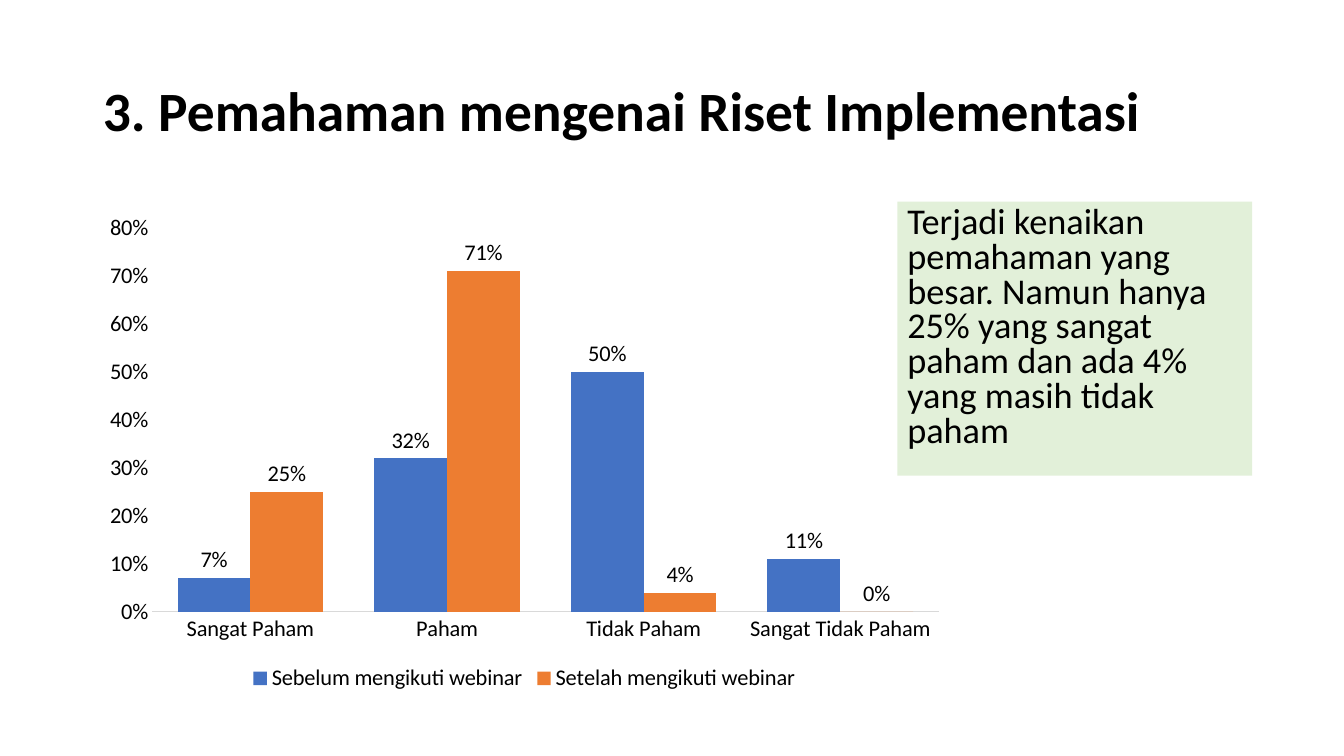
import pptx
import pptx.util
import pptx.chart.data
import pptx.dml.color
import pptx.enum.chart
import pptx.enum.text

Inches = pptx.util.Inches
Pt = pptx.util.Pt
RGBColor = pptx.dml.color.RGBColor
Chart = pptx.enum.chart

BLACK = RGBColor(0x00, 0x00, 0x00)
BLUE = RGBColor(0x44, 0x72, 0xC4)
ORANGE = RGBColor(0xED, 0x7D, 0x31)
GREEN = RGBColor(0xE2, 0xF0, 0xD9)
GREY = RGBColor(0xD9, 0xD9, 0xD9)

FACE = "Calibri"
LEVELS = ["Sangat Paham", "Paham", "Tidak Paham", "Sangat Tidak Paham"]
SERIES = [
    ("Sebelum mengikuti webinar", [0.07, 0.32, 0.5, 0.11], BLUE),
    ("Setelah mengikuti webinar", [0.25, 0.71, 0.04, 0], ORANGE),
]
NOTE = ("Terjadi kenaikan pemahaman yang besar. Namun hanya 25% yang sangat "
        "paham dan ada 4% yang masih tidak paham")


def apply(item, values):
    """Set each named attribute of item."""
    for name, value in values.items():
        setattr(item, name, value)


def style(font, size, bold=False):
    apply(font, {"name": FACE, "size": Pt(size), "bold": bold})
    font.color.rgb = BLACK


def place(shape, left, top, width, height):
    apply(shape, {"left": Inches(left), "top": Inches(top),
                  "width": Inches(width), "height": Inches(height)})


def write(shape, text, size, anchor, format, bold=False):
    """Fill a shape with one left-aligned paragraph."""
    frame = shape.text_frame
    apply(frame, {"word_wrap": True, "vertical_anchor": anchor,
                  "auto_size": pptx.enum.text.MSO_AUTO_SIZE.NONE})
    para = frame.paragraphs[0]
    para.alignment = pptx.enum.text.PP_ALIGN.LEFT
    apply(para, format)
    run = para.add_run()
    run.text = text
    style(run.font, size, bold)


def add_title(slide, text):
    title = slide.shapes.title
    place(title, 0.92, 0.4, 11.5, 1.45)
    write(title, text, 39.6, pptx.enum.text.MSO_ANCHOR.MIDDLE,
          {"line_spacing": 0.9}, bold=True)


def add_note(slide, text):
    box = slide.shapes.add_textbox(
        Inches(8.9), Inches(2), Inches(3.52), Inches(2.72))
    box.fill.solid()
    box.fill.fore_color.rgb = GREEN
    write(box, text, 25.9, pptx.enum.text.MSO_ANCHOR.TOP,
          {"line_spacing": 0.8, "space_before": Pt(10)})


def format_axes(chart):
    for axis in (chart.category_axis, chart.value_axis):
        apply(axis, {"has_major_gridlines": False,
                     "major_tick_mark": Chart.XL_TICK_MARK.NONE,
                     "minor_tick_mark": Chart.XL_TICK_MARK.NONE})
        style(axis.tick_labels.font, 16)
    line = chart.category_axis.format.line
    line.color.rgb = GREY
    line.width = Pt(0.75)
    scale = chart.value_axis
    apply(scale, {"minimum_scale": 0, "maximum_scale": 0.8,
                  "major_unit": 0.1})
    scale.format.line.fill.background()
    apply(scale.tick_labels, {"number_format": "0%",
                              "number_format_is_linked": False})


def format_bars(plot):
    apply(plot, {"gap_width": 70, "overlap": 0, "vary_by_categories": False})
    for bars, (_, _, color) in zip(plot.series, SERIES):
        bars.invert_if_negative = False
        bars.format.fill.solid()
        bars.format.fill.fore_color.rgb = color
        labels = bars.data_labels
        apply(labels, {"show_value": True, "number_format": "0%",
                       "number_format_is_linked": False,
                       "position": Chart.XL_LABEL_POSITION.OUTSIDE_END})
        style(labels.font, 16)


def add_chart(slide):
    data = pptx.chart.data.CategoryChartData(number_format="0%")
    data.categories = LEVELS
    for name, values, _ in SERIES:
        data.add_series(name, values)
    chart = slide.shapes.add_chart(
        Chart.XL_CHART_TYPE.COLUMN_CLUSTERED, Inches(0.92), Inches(2.03),
        Inches(8.56), Inches(4.88), data).chart
    apply(chart, {"has_title": False, "has_legend": True})
    style(chart.font, 16)
    apply(chart.legend, {"position": Chart.XL_LEGEND_POSITION.BOTTOM,
                         "include_in_layout": False})
    style(chart.legend.font, 16)
    format_axes(chart)
    format_bars(chart.plots[0])


def main():
    deck = pptx.Presentation()
    apply(deck, {"slide_width": Inches(13.33), "slide_height": Inches(7.5)})
    slide = deck.slides.add_slide(deck.slide_layouts[5])
    add_title(slide, "3. Pemahaman mengenai Riset Implementasi")
    add_chart(slide)
    add_note(slide, NOTE)
    deck.save("out.pptx")


if __name__ == "__main__":
    main()
